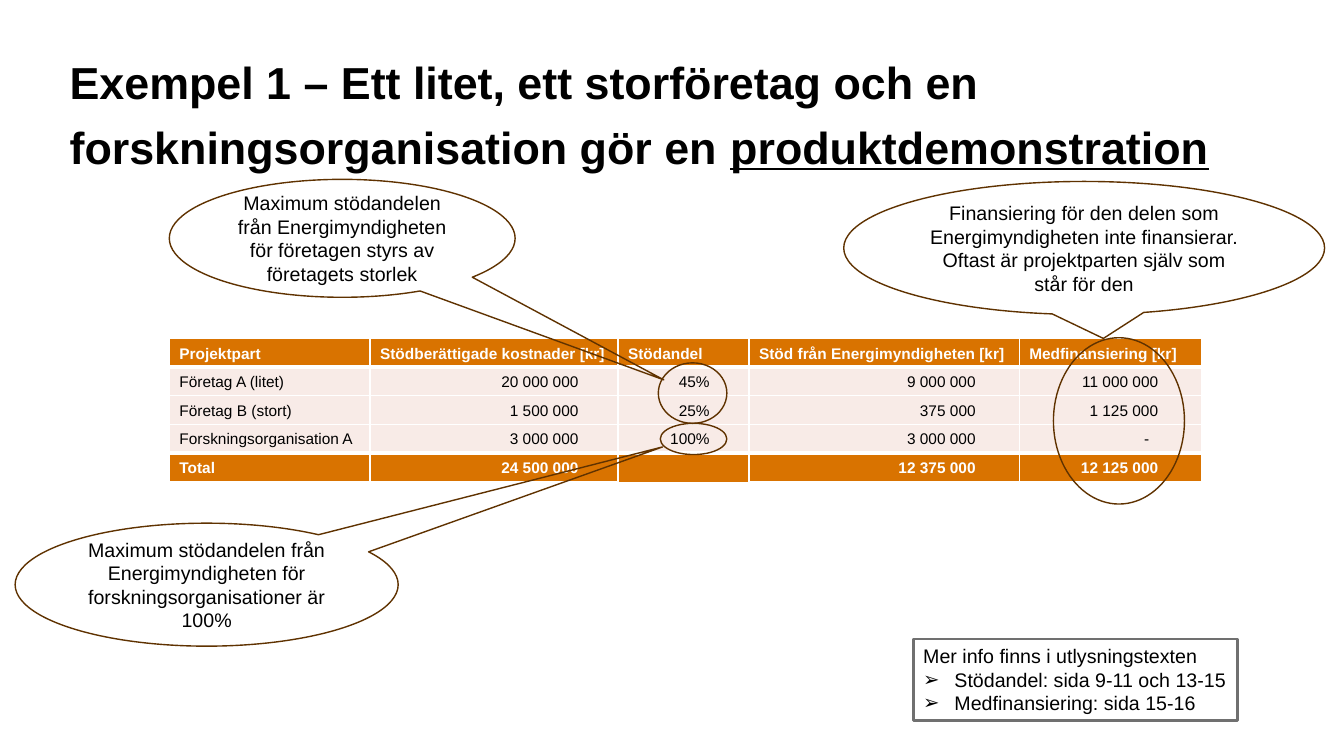
from lxml.etree import SubElement
from pptx import Presentation
from pptx.dml.color import RGBColor
from pptx.enum.shapes import MSO_SHAPE as Preset
from pptx.enum.text import MSO_ANCHOR as Anchor, MSO_AUTO_SIZE as AutoSize, PP_ALIGN as Align
from pptx.oxml.ns import qn
from pptx.util import Inches, Pt

BLACK = RGBColor(0x00, 0x00, 0x00)
WHITE = RGBColor(0xFF, 0xFF, 0xFF)
ORANGE = RGBColor(0xD9, 0x73, 0x00)
BLUSH = RGBColor(0xF8, 0xEB, 0xE7)
BROWN = RGBColor(0x5F, 0x32, 0x00)
GREY = RGBColor(0x70, 0x70, 0x70)

FONT = "Arial"
GRID = 100
TABLE_TOP, TABLE_HEIGHT = 44.8, 18.93
TABLE_LEFT = 12.6
NUMBER_MARGIN, AMOUNT_MARGIN, DASH_MARGIN = 0.39, 0.43, 0.52

BUDGET = [
    (14.93, None, ["Projektpart", "Företag A (litet)", "Företag B (stort)",
                   "Forskningsorganisation A", "Total"]),
    (18.45, NUMBER_MARGIN, ["Stödberättigade kostnader [kr]", "20 000 000", "1 500 000",
                            "3 000 000", "24 500 000"]),
    (9.75, NUMBER_MARGIN, ["Stödandel", "45%", "25%", "100%", ""]),
    (20.1, AMOUNT_MARGIN, ["Stöd från Energimyndigheten [kr]", "9 000 000", "375 000",
                           "3 000 000", "12 375 000"]),
    (13.58, AMOUNT_MARGIN, ["Medfinansiering [kr]", "11 000 000", "1 125 000", "-",
                            "12 125 000"]),
]

HIGHLIGHTS = [
    (48.98, 48, 5.1, 8),
    (78.38, 44.67, 9.75, 22),
    (49.13, 56, 4.95, 4.13),
]

CALLOUTS = [
    ((12.6, 23.73, 25.73, 15.6), (0.93, 1.2),
     ["Maximum stödandelen från Energimyndigheten för företagen styrs av företagets storlek"]),
    ((62.78, 24, 35.78, 17.6), (0.04, 0.68),
     ["Finansiering för den delen som Energimyndigheten inte finansierar.",
      "Oftast är projektparten själv som står för den"]),
    ((1.13, 69.2, 28.5, 16.27), (1.19, -1.12),
     ["Maximum stödandelen från Energimyndigheten för forskningsorganisationer är 100%"]),
]


def assign(target, values):
    for name, value in values.items():
        setattr(target, name, value)


class BudgetSlide:
    def __init__(self, deck):
        self.column = deck.slide_width / GRID
        self.row = deck.slide_height / GRID
        self.slide = deck.slides.add_slide(deck.slide_layouts[5])

    def place(self, left, top, width, height):
        return (round(left * self.column), round(top * self.row),
                round(width * self.column), round(height * self.row))

    def style(self, font, size, color=BLACK, bold=False):
        assign(font, {"name": FONT, "size": Pt(size), "bold": bold})
        font.color.rgb = color

    def title(self, box, plain, underlined):
        heading = self.slide.shapes.title
        assign(heading, dict(zip(("left", "top", "width", "height"), self.place(*box))))
        frame = heading.text_frame
        assign(frame, {"margin_left": 0, "margin_top": 0, "margin_right": 0,
                       "margin_bottom": 0, "vertical_anchor": Anchor.TOP,
                       "word_wrap": True, "auto_size": AutoSize.NONE})
        line = frame.paragraphs[0]
        assign(line, {"alignment": Align.LEFT, "line_spacing": Pt(46)})
        for words, underline in ((plain, False), (underlined, True)):
            run = line.add_run()
            run.text = words
            self.style(run.font, 32, bold=True)
            run.font.underline = underline

    def borders(self, cell, top, bottom):
        properties = cell._tc.get_or_add_tcPr()
        for side, width in (("L", 1), ("R", 1), ("T", top), ("B", bottom)):
            edge = SubElement(properties, qn(f"a:ln{side}"), w=str(Pt(width)))
            SubElement(SubElement(edge, qn("a:solidFill")), qn("a:srgbClr"), val=str(WHITE))

    def budget_column(self, left, width, margin, entries):
        place = self.place(left, TABLE_TOP, width, TABLE_HEIGHT)
        table = self.slide.shapes.add_table(len(entries), 1, *place).table
        table.horz_banding = False
        last = len(entries) - 1
        for index, entry in enumerate(entries):
            cell = table.cell(index, 0)
            strong = index in (0, last)
            self.borders(cell, 3 if index == last else 1, 3 if index == 0 else 1)
            cell.fill.solid()
            cell.fill.fore_color.rgb = ORANGE if strong else BLUSH
            cell.vertical_anchor = Anchor.BOTTOM
            line = cell.text_frame.paragraphs[0]
            if margin and index:
                line.alignment = Align.RIGHT
                cell.margin_right = Inches(DASH_MARGIN if entry == "-" else margin)
            if entry:
                run = line.add_run()
                run.text = entry
                self.style(run.font, 11, WHITE if strong else BLACK, strong)
            else:
                SubElement(line._p, qn("a:endParaRPr"), sz="1100")

    def outline(self, preset, box, color=BROWN, weight=1):
        shape = self.slide.shapes.add_shape(preset, *self.place(*box))
        shape.shadow.inherit = False
        shape.fill.background()
        shape.line.color.rgb = color
        shape.line.width = Pt(weight)
        return shape

    def fill_text(self, frame, lines, alignment, bulleted=False):
        for index, words in enumerate(lines):
            line = frame.paragraphs[0] if index == 0 else frame.add_paragraph()
            line.alignment = alignment
            if bulleted and index:
                properties = line._p.get_or_add_pPr()
                indent = Inches(0.31)
                properties.set("marL", str(indent))
                properties.set("indent", str(-indent))
                SubElement(properties, qn("a:buFont"), typeface=FONT)
                SubElement(properties, qn("a:buChar"), char="➢")
            run = line.add_run()
            run.text = words
            self.style(run.font, 14)

    def callout(self, box, tip, lines):
        bubble = self.outline(Preset.OVAL_CALLOUT, box)
        for index, offset in enumerate(tip):
            bubble.adjustments[index] = offset
        assign(bubble.text_frame, {"word_wrap": True, "vertical_anchor": Anchor.MIDDLE})
        self.fill_text(bubble.text_frame, lines, Align.CENTER)

    def info(self, box, lines):
        frame = self.outline(Preset.RECTANGLE, box, GREY, 2).text_frame
        assign(frame, {"word_wrap": False, "vertical_anchor": Anchor.TOP,
                       "auto_size": AutoSize.SHAPE_TO_FIT_TEXT})
        self.fill_text(frame, lines, Align.LEFT, bulleted=True)


def main():
    deck = Presentation()
    assign(deck, {"slide_width": Inches(13.33), "slide_height": Inches(7.5)})
    page = BudgetSlide(deck)
    page.title((5.18, 5.87, 90.68, 17.6),
               "Exempel 1 – Ett litet, ett storföretag och en forskningsorganisation gör en ",
               "produktdemonstration")
    left = TABLE_LEFT
    for width, margin, entries in BUDGET:
        page.budget_column(left, width, margin, entries)
        left += width
    for highlight, callout in zip(HIGHLIGHTS, CALLOUTS):
        page.outline(Preset.OVAL, highlight)
        page.callout(*callout)
    page.info((67.95, 84.53, 24.15, 10.8),
              ["Mer info finns i utlysningstexten",
               "Stödandel: sida 9-11 och 13-15",
               "Medfinansiering: sida 15-16"])
    deck.save("out.pptx")


if __name__ == "__main__":
    main()
